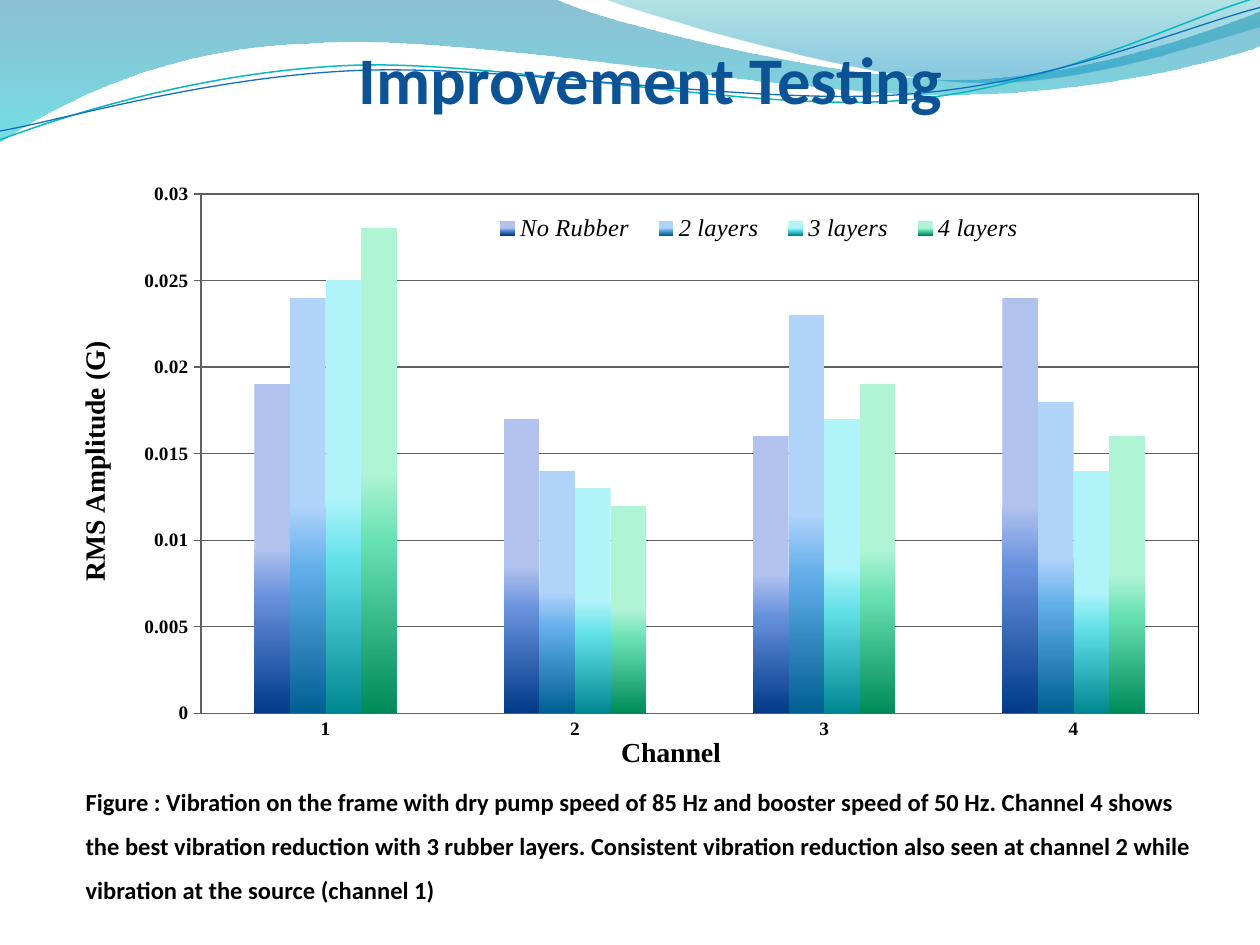
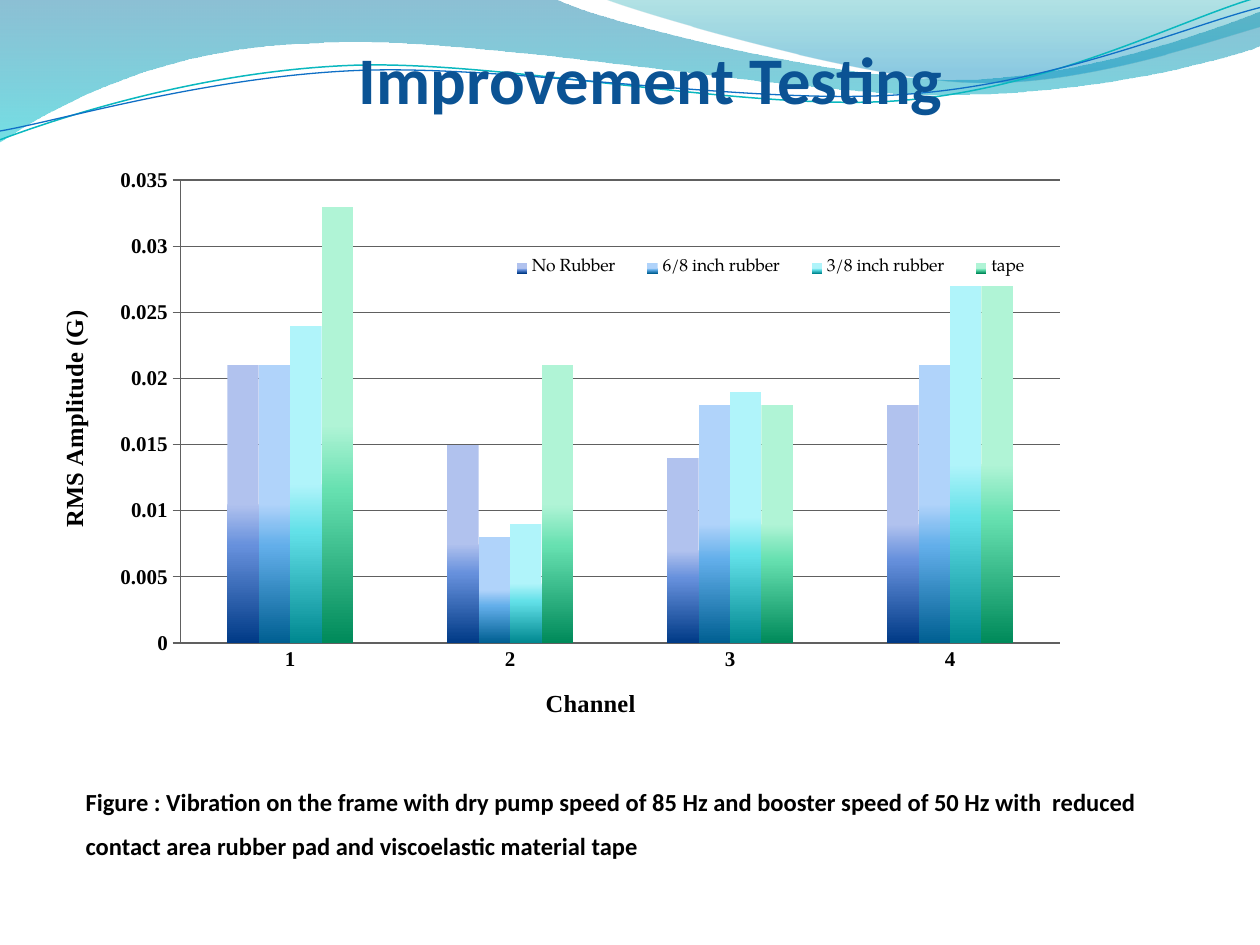
import pptx
import pptx.chart.data
import pptx.dml.color
import pptx.enum.chart
import pptx.enum.text
import pptx.oxml
import pptx.oxml.ns
import pptx.util

Cm, Pt = pptx.util.Cm, pptx.util.Pt
RGBColor = pptx.dml.color.RGBColor
qn = pptx.oxml.ns.qn
TICK = pptx.enum.chart.XL_TICK_MARK

NAVY = RGBColor(0x0B, 0x53, 0x94)
BLACK = RGBColor(0, 0, 0)
GREY = RGBColor(0x60, 0x60, 0x60)
TEAL = RGBColor(0x0A, 0xB8, 0xBF)
BLUE = RGBColor(0x0F, 0x6F, 0xC6)
SKY_TOP, SKY_LOW = RGBColor(0, 0x74, 0xA1), RGBColor(0, 0xC6, 0xCF)
SEA_TOP, SEA_LOW = RGBColor(0, 0xA1, 0xA9), RGBColor(0, 0x8B, 0xBF)
BARS = [  # light, middle and dark tone of each series
    (RGBColor(0xB1, 0xC2, 0xEE), RGBColor(0x66, 0x90, 0xDC), RGBColor(0, 0x3A, 0x86)),
    (RGBColor(0xB0, 0xD3, 0xFA), RGBColor(0x62, 0xAE, 0xEA), RGBColor(0, 0x5F, 0x92)),
    (RGBColor(0xB0, 0xF4, 0xFA), RGBColor(0x62, 0xE0, 0xE8), RGBColor(0, 0x88, 0x90)),
    (RGBColor(0xB0, 0xF4, 0xD6), RGBColor(0x66, 0xE0, 0xB0), RGBColor(0, 0x8A, 0x5A)),
]
TIMES = "Times New Roman"
INCH = 2.54  # wave points are in inches

TITLE = {"name": "Calibri", "size": Pt(38), "bold": True}
NOTE = {"name": "Calibri", "size": Pt(14), "bold": True}


def grad(fill, props, stops):
    """Fill from top to bottom with stops of (percent, colour, opacity)."""
    fill.solid()
    marks = "".join(
        f'<a:gs pos="{pos * 1000}"><a:srgbClr val="{tone}">'
        f'<a:alpha val="{alpha * 1000}"/></a:srgbClr></a:gs>'
        for pos, tone, alpha in stops)
    old = props.find(qn("a:solidFill"))
    props.replace(old, pptx.oxml.parse_xml(
        f'<a:gradFill {pptx.oxml.ns.nsdecls("a")} rotWithShape="1"><a:gsLst>{marks}'
        '</a:gsLst><a:lin ang="5400000" scaled="0"/></a:gradFill>'))


deck = pptx.Presentation()
deck.slide_width, deck.slide_height = Cm(25.4), Cm(19.05)
base = deck.slide_layouts[1]
pages = [deck.slides.add_slide(base) for _ in range(2)]

# Waves: a start, then straight pieces (x, y) or curves of three points
waves = [
    {"start": (0, 0), "stops": [(0, SKY_TOP, 45), (100, SKY_LOW, 55)], "parts": [
        (4.4, -0.01), (4.76, 0.17, 6.64, 0.63, 7.58, 0.63),
        (8.53, 0.63, 9.58, 0.26, 10, 0.09), (10.01, 0.36),
        (9.83, 0.44, 8.7, 0.76, 7.46, 0.75), (6.22, 0.75, 3.82, 0.28, 2.57, 0.34),
        (1.29, 0.36, 0.46, 0.83, -0.01, 1.13), (0, 0)]},
    {"start": (4.79, -0.01), "stops": [(0, SEA_TOP, 30), (80, SEA_LOW, 45)], "parts": [
        (5.09, 0.11, 6.82, 0.62, 7.69, 0.65), (8.56, 0.69, 9.61, 0.32, 10, 0.21),
        (10, 0), (4.79, -0.01)]},
    {"start": (0, 1.11), "line": (TEAL, 0.85), "parts": [
        (0.48, 0.93, 1.58, 0.57, 2.77, 0.52), (3.95, 0.47, 5.93, 0.89, 7.13, 0.8),
        (8.33, 0.71, 9.38, 0.15, 9.98, -0.02)]},
    {"start": (0, 1.04), "line": (BLUE, 0.75), "parts": [
        (0.47, 0.96, 1.64, 0.61, 2.83, 0.56), (4.03, 0.51, 5.97, 0.84, 7.17, 0.75),
        (8.36, 0.67, 9.41, 0.21, 10, 0.06)]},
]
for spot, wave in enumerate(waves):
    flat = [*wave["start"], *(num for part in wave["parts"] for num in part)]
    dots = [(Cm(x * INCH), Cm(y * INCH)) for x, y in zip(flat[::2], flat[1::2])]
    pen = pages[0].shapes.build_freeform(*dots[0])
    pen.add_line_segments(dots[1:], close="stops" in wave)
    shape = pen.convert_to_shape()
    track = shape._element.find(".//" + qn("a:path"))
    lines = iter(track.findall(qn("a:lnTo")))
    for part in wave["parts"]:
        group = [next(lines) for _ in range(len(part) // 2)]
        if len(group) == 3:
            curve = pptx.oxml.parse_xml(f'<a:cubicBezTo {pptx.oxml.ns.nsdecls("a")}/>')
            group[0].addprevious(curve)
            for line in group:
                curve.append(line[0])
                track.remove(line)
    shape.shadow.inherit = False
    if "stops" in wave:
        grad(shape.fill, shape._element.spPr, wave["stops"])
        shape.line.fill.background()
    else:
        shape.fill.background()
        shape.line.color.rgb, shape.line.width = wave["line"][0], Pt(wave["line"][1])
    shape._element.nvSpPr.cNvPr.set("id", str(20 + spot))
    deck.slide_master.shapes._spTree.insert(2 + spot, shape._element)

# Layout boxes are shares of the chart: left, top, width, height
tests = [
    {"note": "Figure : Vibration on the frame with dry pump speed of 85 Hz and booster speed "
             "of 50 Hz. Channel 4 shows the best vibration reduction with 3 rubber layers. "
             "Consistent vibration reduction also seen at channel 2 while vibration at the "
             "source (channel 1)",
     "deep": 2.95, "box": (0.85, 3.39, 23.71, 12.28), "top": 0.03, "frame": True,
     "head": 16, "tick": 11,
     "key": {"name": TIMES, "size": Pt(14), "italic": True},
     "plot": (0.135, 0.043, 0.848, 0.866), "legend": (0.371, 0.07, 0.477, 0.06),
     "x": (0.488, 0.936), "y": (0.025, 0.286),
     "rows": {"No Rubber": (0.019, 0.017, 0.016, 0.024),
              "2 layers": (0.024, 0.014, 0.023, 0.018),
              "3 layers": (0.025, 0.013, 0.017, 0.014),
              "4 layers": (0.028, 0.012, 0.019, 0.016)}},
    {"note": "Figure : Vibration on the frame with dry pump speed of 85 Hz and booster speed "
             "of 50 Hz with  reduced contact area rubber pad and viscoelastic material tape",
     "deep": 2.06, "box": (0.64, 3.18, 24.33, 11.86), "top": 0.035, "frame": False,
     "head": 14, "tick": 12,
     "key": {"name": "TeX Gyre Pagella", "size": Pt(10)},
     "plot": (0.123, 0.038, 0.729, 0.787), "legend": (0.38, 0.163, 0.464, 0.05),
     "x": (0.422, 0.892), "y": (0.018, 0.252),
     "rows": {"No Rubber": (0.021, 0.015, 0.014, 0.018),
              "6/8 inch rubber": (0.021, 0.008, 0.018, 0.021),
              "3/8 inch rubber": (0.024, 0.009, 0.019, 0.027),
              "tape": (0.033, 0.021, 0.018, 0.027)}},
]

for page, test in zip(pages, tests):
    title, body = page.placeholders
    words = [(title, "Improvement Testing", (2.54, 0.64, 21.16, 2.11)),
             (body, test["note"], (1.47, 15.44, 23.06, test["deep"]))]
    for hold, text, box in words:
        hold.left, hold.top, hold.width, hold.height = map(Cm, box)
        hold.text_frame.text = text
        hold.text_frame.auto_size = pptx.enum.text.MSO_AUTO_SIZE.NONE
        hold.text_frame.vertical_anchor = pptx.enum.text.MSO_ANCHOR.TOP
    para = body.text_frame.paragraphs[0]
    para.line_spacing, para.space_before = 1.5, Pt(0)
    props = para._p.get_or_add_pPr()
    props.set("marL", "0")
    props.set("indent", "0")
    props.append(pptx.oxml.parse_xml(f'<a:buNone {pptx.oxml.ns.nsdecls("a")}/>'))

    data = pptx.chart.data.CategoryChartData()
    data.categories = ["1", "2", "3", "4"]
    for name, vals in test["rows"].items():
        data.add_series(name, vals)
    chart = page.shapes.add_chart(
        pptx.enum.chart.XL_CHART_TYPE.COLUMN_CLUSTERED, *map(Cm, test["box"]), data).chart
    chart.has_title = False
    chart.has_legend = True
    legend = chart.legend
    legend.position = pptx.enum.chart.XL_LEGEND_POSITION.RIGHT
    legend.include_in_layout = False
    bars = chart.plots[0]
    bars.gap_width, bars.overlap, bars.vary_by_categories = 300, 0, False
    for row, (light, mid, dark) in zip(bars.series, BARS):
        fill = row.format.fill
        grad(fill, row._element.get_or_add_spPr(),
             [(0, light, 100), (50, light, 100), (65, mid, 100), (100, dark, 100)])

    fonts = [(title.text_frame.paragraphs[0].runs[0].font, TITLE, NAVY),
             (para.runs[0].font, NOTE, BLACK),
             (chart.font, {"name": "TeX Gyre Pagella", "size": Pt(10)}, BLACK),
             (legend.font, test["key"], BLACK)]
    cat, val = chart.category_axis, chart.value_axis
    for axis, text, mark in [(cat, "Channel", TICK.NONE), (val, "RMS Amplitude (G)", TICK.CROSS)]:
        axis.major_tick_mark, axis.minor_tick_mark = mark, TICK.NONE
        axis.format.line.color.rgb = GREY
        axis.axis_title.text_frame.text = text
        run = axis.axis_title.text_frame.paragraphs[0].runs[0]
        fonts += [(run.font, {"name": TIMES, "size": Pt(test["head"]), "bold": True}, BLACK),
                  (axis.tick_labels.font,
                   {"name": TIMES, "size": Pt(test["tick"]), "bold": True}, BLACK)]
    for font, looks, tone in fonts:
        for key, look in looks.items():
            setattr(font, key, look)
        font.color.rgb = tone

    scale = {"minimum_scale": 0, "maximum_scale": test["top"], "major_unit": 0.005,
             "has_major_gridlines": True}
    for key, look in scale.items():
        setattr(val, key, look)
    val.tick_labels.number_format = "General"
    val.tick_labels.number_format_is_linked = False
    val.major_gridlines.format.line.color.rgb = GREY
    val.major_gridlines.format.line.width = Pt(0.75)
    turn = val.axis_title.text_frame._txBody.bodyPr
    turn.set("rot", "-5400000")
    turn.set("vert", "horz")

    area = chart._chartSpace.chart.plotArea
    spots = [(area, 0, test["plot"]), (legend._element, 1, test["legend"]),
             (cat.axis_title._element, 1, test["x"]), (val.axis_title._element, 1, test["y"])]
    for part, index, box in spots:
        for old in part.findall(qn("c:layout")):
            part.remove(old)
        inner = '<c:layoutTarget val="inner"/>' if part is area else ""
        modes = '<c:xMode val="edge"/><c:yMode val="edge"/>'
        sides = "".join(f'<c:{side} val="{size}"/>' for side, size in zip("xywh", box))
        part.insert(index, pptx.oxml.parse_xml(
            f'<c:layout {pptx.oxml.ns.nsdecls("c")}><c:manualLayout>{inner}{modes}{sides}'
            '</c:manualLayout></c:layout>'))
    if test["frame"]:
        area.append(pptx.oxml.parse_xml(
            f'<c:spPr {pptx.oxml.ns.nsdecls("c", "a")}><a:noFill/><a:ln w="9525"><a:solidFill>'
            f'<a:srgbClr val="{BLACK}"/></a:solidFill></a:ln></c:spPr>'))

deck.save("out.pptx")
